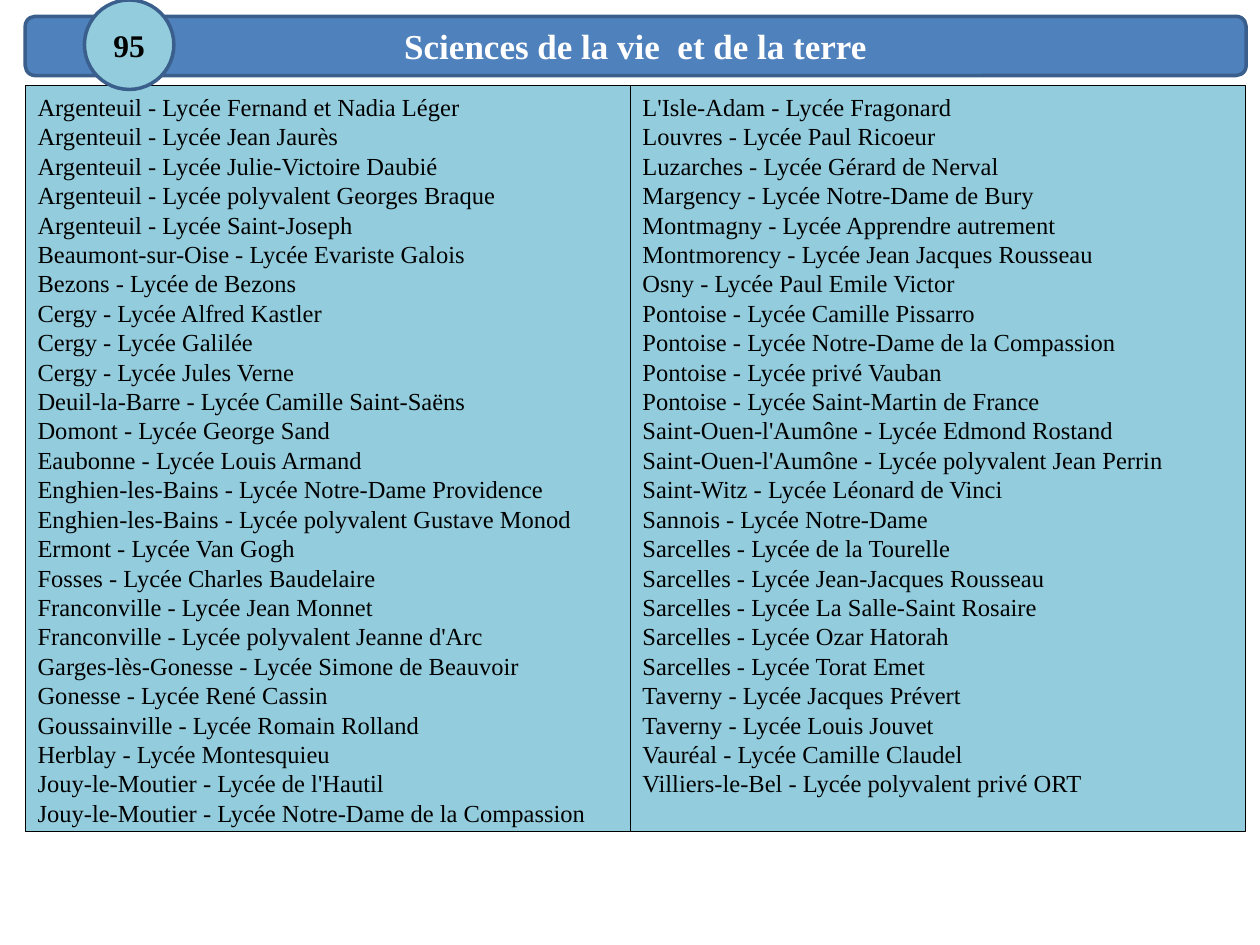
import pptx
import pptx.dml.color
import pptx.enum.shapes
import pptx.enum.text
import pptx.util

Inches = pptx.util.Inches
Pt = pptx.util.Pt
RGBColor = pptx.dml.color.RGBColor
MSO_SHAPE = pptx.enum.shapes.MSO_SHAPE
MSO_ANCHOR = pptx.enum.text.MSO_ANCHOR
PP_ALIGN = pptx.enum.text.PP_ALIGN

BLUE = RGBColor(0x4F, 0x81, 0xBD)
DARK_BLUE = RGBColor(0x3A, 0x5F, 0x8C)
AQUA = RGBColor(0x93, 0xCD, 0xDD)
BLACK = RGBColor(0, 0, 0)
WHITE = RGBColor(0xFF, 0xFF, 0xFF)

LEFT_SCHOOLS = [
    "Argenteuil - Lycée Fernand et Nadia Léger",
    "Argenteuil - Lycée Jean Jaurès",
    "Argenteuil - Lycée Julie-Victoire Daubié",
    "Argenteuil - Lycée polyvalent Georges Braque",
    "Argenteuil - Lycée Saint-Joseph",
    "Beaumont-sur-Oise - Lycée Evariste Galois",
    "Bezons - Lycée de Bezons",
    "Cergy - Lycée Alfred Kastler",
    "Cergy - Lycée Galilée",
    "Cergy - Lycée Jules Verne",
    "Deuil-la-Barre - Lycée Camille Saint-Saëns",
    "Domont - Lycée George Sand",
    "Eaubonne - Lycée Louis Armand",
    "Enghien-les-Bains - Lycée Notre-Dame Providence",
    "Enghien-les-Bains - Lycée polyvalent Gustave Monod",
    "Ermont - Lycée Van Gogh",
    "Fosses - Lycée Charles Baudelaire",
    "Franconville - Lycée Jean Monnet",
    "Franconville - Lycée polyvalent Jeanne d'Arc",
    "Garges-lès-Gonesse - Lycée Simone de Beauvoir",
    "Gonesse - Lycée René Cassin",
    "Goussainville - Lycée Romain Rolland",
    "Herblay - Lycée Montesquieu",
    "Jouy-le-Moutier - Lycée de l'Hautil",
    "Jouy-le-Moutier - Lycée Notre-Dame de la Compassion",
]

RIGHT_SCHOOLS = [
    "L'Isle-Adam - Lycée Fragonard",
    "Louvres - Lycée Paul Ricoeur",
    "Luzarches - Lycée Gérard de Nerval",
    "Margency - Lycée Notre-Dame de Bury",
    "Montmagny - Lycée Apprendre autrement",
    "Montmorency - Lycée Jean Jacques Rousseau",
    "Osny - Lycée Paul Emile Victor",
    "Pontoise - Lycée Camille Pissarro",
    "Pontoise - Lycée Notre-Dame de la Compassion",
    "Pontoise - Lycée privé Vauban",
    "Pontoise - Lycée Saint-Martin de France",
    "Saint-Ouen-l'Aumône - Lycée Edmond Rostand",
    "Saint-Ouen-l'Aumône - Lycée polyvalent Jean Perrin",
    "Saint-Witz - Lycée Léonard de Vinci",
    "Sannois - Lycée Notre-Dame",
    "Sarcelles - Lycée de la Tourelle",
    "Sarcelles - Lycée Jean-Jacques Rousseau",
    "Sarcelles - Lycée La Salle-Saint Rosaire",
    "Sarcelles - Lycée Ozar Hatorah",
    "Sarcelles - Lycée Torat Emet",
    "Taverny - Lycée Jacques Prévert",
    "Taverny - Lycée Louis Jouvet",
    "Vauréal - Lycée Camille Claudel",
    "Villiers-le-Bel - Lycée polyvalent privé ORT",
]


def set_attrs(obj, values):
    """Set each attribute of obj from a dict of format values."""
    for name, value in values.items():
        setattr(obj, name, value)


def add_box(s, kind, box, fill, line, width):
    """Add a flat filled and outlined shape."""
    sp = s.shapes.add_shape(kind, *map(Inches, box))
    sp.shadow.inherit = False
    sp.fill.solid()
    sp.fill.fore_color.rgb = fill
    sp.line.color.rgb = line
    sp.line.width = Pt(width)
    return sp


def write_lines(sp, lines, size, color, bold, align, anchor):
    """Write each line as a paragraph of the shape."""
    tf = sp.text_frame
    set_attrs(tf, {"word_wrap": True, "vertical_anchor": anchor, "text": "\n".join(lines)})
    font = {"name": "Times New Roman", "size": Pt(size), "bold": bold}
    for p in tf.paragraphs:
        p.alignment = align
        for r in p.runs:
            set_attrs(r.font, font)
            r.font.color.rgb = color


def add_label(s, kind, box, fill, text, size, color):
    """Add a blue-edged shape with a bold centred label."""
    sp = add_box(s, kind, box, fill, DARK_BLUE, 2)
    write_lines(sp, [text], size, color, True, PP_ALIGN.CENTER, MSO_ANCHOR.MIDDLE)


def add_school_list(s, left, width, schools):
    """Add one column of schools."""
    sp = add_box(s, MSO_SHAPE.RECTANGLE, (left, 0.68, width, 5.92), AQUA, BLACK, 0.25)
    write_lines(sp, schools, 14, BLACK, False, PP_ALIGN.LEFT, MSO_ANCHOR.TOP)


def main():
    """Build and save the slide."""
    prs = pptx.Presentation()
    set_attrs(prs, {"slide_width": Inches(10), "slide_height": Inches(7.5)})
    s = prs.slides.add_slide(prs.slide_layouts[6])
    add_label(s, MSO_SHAPE.ROUNDED_RECTANGLE, (0.2, 0.13, 9.69, 0.47), BLUE,
              "Sciences de la vie  et de la terre", 20, WHITE)
    add_school_list(s, 0.2, 4.8, LEFT_SCHOOLS)
    add_label(s, MSO_SHAPE.OVAL, (0.67, 0, 0.71, 0.71), AQUA, "95", 18, BLACK)
    add_school_list(s, 5, 4.88, RIGHT_SCHOOLS)
    prs.save("out.pptx")


if __name__ == "__main__":
    main()
